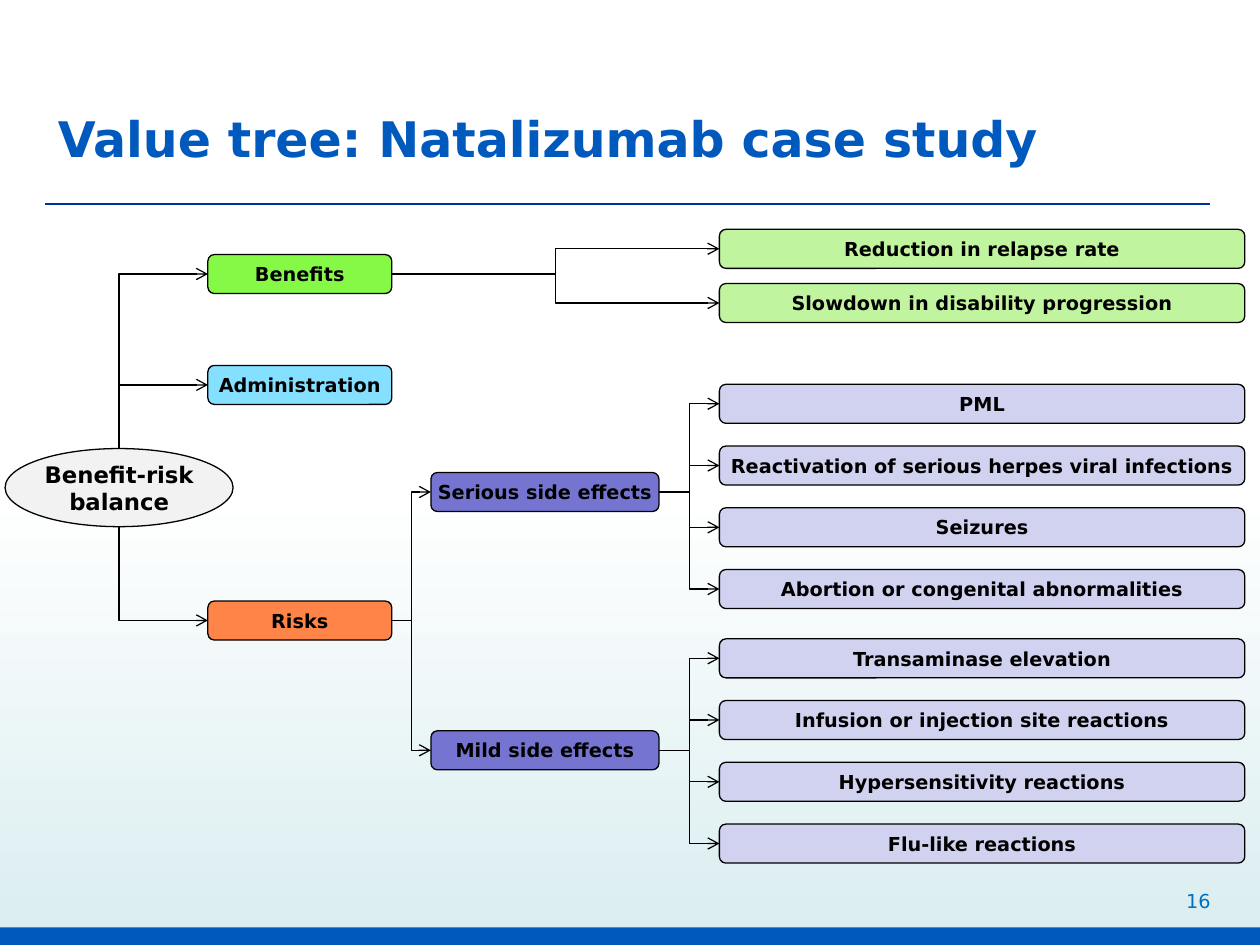
"""Build the value tree slide of the Natalizumab case study."""
from copy import deepcopy

from lxml import etree
from pptx import Presentation
from pptx.dml.color import RGBColor
from pptx.enum.shapes import MSO_CONNECTOR, MSO_SHAPE
from pptx.enum.text import MSO_ANCHOR, MSO_AUTO_SIZE, PP_ALIGN
from pptx.oxml.ns import qn
from pptx.util import Inches, Pt

ROUNDED, ELLIPSE, RECTANGLE = MSO_SHAPE.ROUNDED_RECTANGLE, MSO_SHAPE.OVAL, MSO_SHAPE.RECTANGLE
ELBOW, STRAIGHT = MSO_CONNECTOR.ELBOW, MSO_CONNECTOR.STRAIGHT
LEFT, CENTER, RIGHT = PP_ALIGN.LEFT, PP_ALIGN.CENTER, PP_ALIGN.RIGHT
TOP, MIDDLE, BOTTOM = MSO_ANCHOR.TOP, MSO_ANCHOR.MIDDLE, MSO_ANCHOR.BOTTOM
NO_AUTOFIT = MSO_AUTO_SIZE.NONE

BLACK = RGBColor(0x00, 0x00, 0x00)
WHITE = RGBColor(0xFF, 0xFF, 0xFF)
MIST = RGBColor(0xDA, 0xED, 0xEF)
BLUE = RGBColor(0x00, 0x59, 0xBD)
NAVY = RGBColor(0x00, 0x33, 0x99)
NUMBER_BLUE = RGBColor(0x00, 0x70, 0xC0)
GREEN = RGBColor(0x86, 0xF8, 0x46)
PALE_GREEN = RGBColor(0xC1, 0xF4, 0x9E)
SKY = RGBColor(0x85, 0xDF, 0xFF)
ORANGE = RGBColor(0xFF, 0x84, 0x47)
VIOLET = RGBColor(0x75, 0x75, 0xD1)
LAVENDER = RGBColor(0xD1, 0xD1, 0xF0)
GREY = RGBColor(0xF2, 0xF2, 0xF2)

FONT = "DejaVu Sans"
TITLE = "Value tree: Natalizumab case study"
PAGE_NUMBER = "16"
ROOT = "Benefit-risk balance"
ROOT_FRAME = (0.04, 3.56, 1.81, 0.62)

# name: (column, top, fill)
BRANCHES = {
    "Benefits": ("branch", 2.02, GREEN),
    "Administration": ("branch", 2.9, SKY),
    "Risks": ("branch", 4.77, ORANGE),
    "Serious side effects": ("group", 3.75, VIOLET),
    "Mild side effects": ("group", 5.8, VIOLET),
}
# parent, first top, row step, fill, leaves
LEAF_STACKS = [
    ("Benefits", 1.82, 0.43, PALE_GREEN,
     ["Reduction in relapse rate", "Slowdown in disability progression"]),
    ("Serious side effects", 3.05, 0.49, LAVENDER,
     ["PML", "Reactivation of serious herpes viral infections",
      "Seizures", "Abortion or congenital abnormalities"]),
    ("Mild side effects", 5.07, 0.49, LAVENDER,
     ["Transaminase elevation", "Infusion or injection site reactions",
      "Hypersensitivity reactions", "Flu-like reactions"]),
]
COLUMNS = {"branch": (1.65, 1.46), "group": (3.42, 1.81), "leaf": (5.71, 4.17)}
BOX_HEIGHT = 0.31
RIGHT_SIDE, LEFT_SIDE = 3, 1


def write(frame, text, size, color, bold, align, anchor, inset=(0, 0)):
    frame.text = text
    frame.word_wrap = True
    frame.auto_size = NO_AUTOFIT
    frame.vertical_anchor = anchor
    frame.margin_left = frame.margin_right = Inches(inset[0])
    frame.margin_top = frame.margin_bottom = Inches(inset[1])
    paragraph = frame.paragraphs[0]
    paragraph.alignment = align
    font = paragraph.runs[0].font
    font.name, font.size, font.bold = FONT, Pt(size), bold
    font.color.rgb = color


def add_node(slide, preset, frame, fill, text, size=11):
    node = slide.shapes.add_shape(preset, *map(Inches, frame))
    node.shadow.inherit = False
    node.fill.solid()
    node.fill.fore_color.rgb = fill
    node.line.color.rgb = BLACK
    node.line.width = Pt(0.75)
    write(node.text_frame, text, size, BLACK, True, CENTER, MIDDLE)
    return node


def add_line(slide, kind, start, end, color, width):
    line = slide.shapes.add_connector(kind, *start, *end)
    line.line.color.rgb = color
    line.line.width = Pt(width)
    etree.SubElement(line.element.spPr, qn("a:effectLst"))
    return line


def add_arrow(slide, start, end):
    arrow = add_line(slide, ELBOW, start, end, BLACK, 0.75)
    etree.SubElement(arrow.line._get_or_add_ln(), qn("a:tailEnd"), type="arrow")
    return arrow


def link(slide, parent, child):
    arrow = add_arrow(slide, (0, 0), (0, 0))
    arrow.begin_connect(parent, RIGHT_SIDE)
    arrow.end_connect(child, LEFT_SIDE)


def link_root(slide, root, child):
    x = root.left + root.width // 2
    end_y = child.top + child.height // 2
    upward = end_y < root.top
    start_y = root.top if upward else root.top + root.height
    arrow = add_arrow(slide, (x, start_y), (child.left, end_y))
    rise, run = abs(end_y - start_y), child.left - x
    arrow.left = (x + child.left - rise) // 2
    arrow.top = (start_y + end_y - run) // 2
    arrow.width, arrow.height = rise, run
    properties = arrow.element.spPr
    transform = properties.find(qn("a:xfrm"))
    transform.set("rot", "5400000" if upward else "16200000")
    transform.set("flipH", "1")
    transform.set("flipV", "1" if upward else "0")
    properties.find(qn("a:prstGeom")).set("prst", "bentConnector2")


def paint_backdrop(slide):
    fill = slide.background.fill
    fill.gradient()
    fill.gradient_angle = 90
    bottom, middle = fill.gradient_stops
    bottom.color.rgb, bottom.position = MIST, 0
    middle.color.rgb, middle.position = WHITE, 0.48
    white_stop = slide.element.findall(".//" + qn("a:gs"))[-1]
    top_stop = deepcopy(white_stop)
    top_stop.set("pos", "100000")
    white_stop.addnext(top_stop)

    band = slide.shapes.add_shape(RECTANGLE, *map(Inches, (0, 7.36, 10, 0.14)))
    band.shadow.inherit = False
    band.fill.solid()
    band.fill.fore_color.rgb = BLUE
    band.line.fill.background()
    y = Inches(1.62)
    add_line(slide, STRAIGHT, (Inches(0.36), y), (Inches(9.6), y), NAVY, 1)


def draw_tree(slide):
    nodes = {}
    for name, (column, top, fill) in BRANCHES.items():
        left, width = COLUMNS[column]
        nodes[name] = add_node(slide, ROUNDED, (left, top, width, BOX_HEIGHT), fill, name)
    root = add_node(slide, ELLIPSE, ROOT_FRAME, GREY, ROOT, 13)
    for name, (column, _, _) in BRANCHES.items():
        if column == "branch":
            link_root(slide, root, nodes[name])
        else:
            link(slide, nodes["Risks"], nodes[name])
    left, width = COLUMNS["leaf"]
    for parent, first_top, step, fill, leaves in LEAF_STACKS:
        for row, name in enumerate(leaves):
            frame = (left, first_top + row * step, width, BOX_HEIGHT)
            link(slide, nodes[parent], add_node(slide, ROUNDED, frame, fill, name))


def main():
    deck = Presentation()
    deck.slide_width, deck.slide_height = Inches(10), Inches(7.5)
    slide = deck.slides.add_slide(deck.slide_layouts[5])
    paint_backdrop(slide)

    title = slide.shapes.title
    title.left, title.top, title.width, title.height = map(Inches, (0.36, 0.81, 9.29, 0.86))
    write(title.text_frame, TITLE, 28, BLUE, True, LEFT, TOP, (0.1, 0.05))

    draw_tree(slide)
    page_number = slide.shapes.add_textbox(*map(Inches, (9.27, 6.98, 0.34, 0.26)))
    write(page_number.text_frame, PAGE_NUMBER, 11, NUMBER_BLUE, False, RIGHT, BOTTOM)
    deck.save("out.pptx")


if __name__ == "__main__":
    main()
